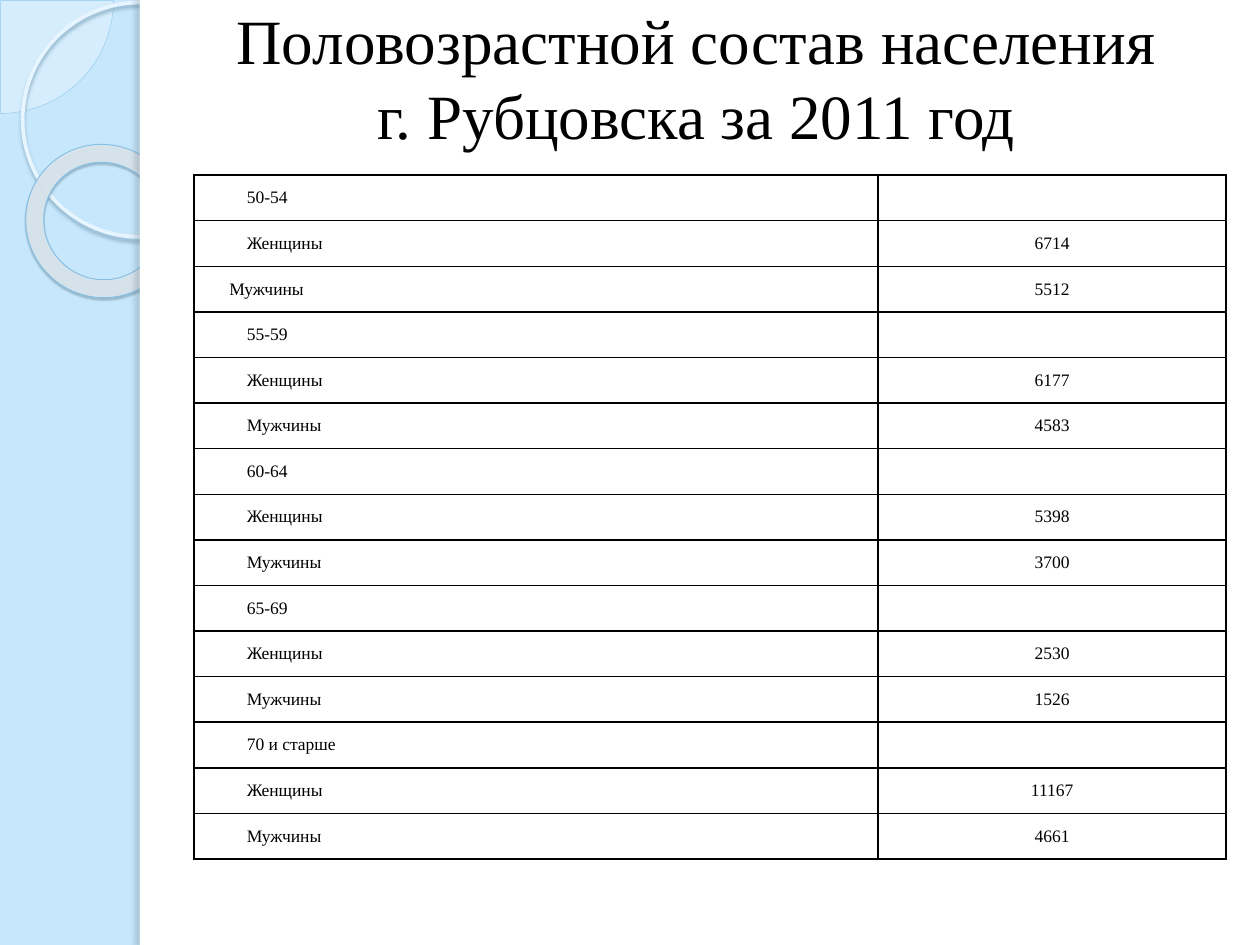
from lxml.etree import SubElement
from pptx import Presentation
from pptx.dml.color import RGBColor
from pptx.enum.shapes import MSO_SHAPE as SHAPE
from pptx.enum.text import MSO_ANCHOR as ANCHOR, PP_ALIGN as ALIGN
from pptx.oxml.ns import qn
from pptx.util import Inches, Pt

FONT = "Times New Roman"
COLORS = {
    "sky": "C6E7FC", "white": "FFFFFF", "black": "000000",
    "pie": "F5FBFF", "pie_line": "92CBEF", "ring": "E6F5FF",
    "donut": "DCE7EE", "donut_line": "85BFE4",
    "ring_shadow": "88ADC4", "donut_shadow": "3F5767", "edge_shadow": "61737F",
}
TITLE = "Половозрастной состав населения г. Рубцовска за 2011 год"
AGE_GROUPS = [
    ("50-54", 6714, 5512),
    ("55-59", 6177, 4583),
    ("60-64", 5398, 3700),
    ("65-69", 2530, 1526),
    ("70 и старше", 11167, 4661),
]
ROW_HEIGHT = 0.362
COLUMN_WIDTHS = (5.43, 2.76)


def rgb(name):
    return RGBColor.from_string(COLORS[name])


def set_alpha(color_element, percent):
    SubElement(color_element, qn("a:alpha"), val=str(percent * 1000))


def add_shadow(shape, color, alpha, blur, distance, angle):
    effects = shape.element.spPr.find(qn("a:effectLst"))
    shadow = SubElement(effects, qn("a:outerShdw"), blurRad=str(Pt(blur)),
                        dist=str(Pt(distance)), dir=str(angle * 60000),
                        algn="tl", rotWithShape="0")
    set_alpha(SubElement(shadow, qn("a:srgbClr"), val=COLORS[color]), alpha)


def add_decoration(page, kind, box, fill=None, alpha=None, line=None,
                   adjustments=(), rotation=0, shadow=None):
    shape = page.shapes.add_shape(kind, *map(Inches, box))
    shape.shadow.inherit = False
    shape.rotation = rotation
    for index, value in enumerate(adjustments):
        shape.adjustments[index] = value
    if fill:
        shape.fill.solid()
        shape.fill.fore_color.rgb = rgb(fill)
        if alpha:
            set_alpha(shape.element.spPr.find(".//" + qn("a:srgbClr")), alpha)
    else:
        shape.fill.background()
    if line:
        color, width = line
        shape.line.color.rgb = rgb(color)
        shape.line.width = Pt(width)
    else:
        shape.line.fill.background()
    if shadow:
        add_shadow(shape, *shadow)


def add_side_band(page):
    add_decoration(page, SHAPE.PIE, (-0.89, -0.89, 1.79, 1.79), "pie", 33,
                   line=("pie_line", 0.25), adjustments=(0, 54))
    add_decoration(page, SHAPE.OVAL, (0.18, 0.02, 1.86, 1.86),
                   line=("ring", 2.15), shadow=("ring_shadow", 85, 2, 2, 90))
    add_decoration(page, SHAPE.DONUT, (0.2, 1.15, 1.23, 1.21), "donut", 90,
                   line=("donut_line", 0.58), adjustments=(0.118,),
                   rotation=38.6, shadow=("donut_shadow", 35, 1, 1.2, 75))
    add_decoration(page, SHAPE.RECTANGLE, (1.11, 0, 8.89, 7.5), "white")
    add_decoration(page, SHAPE.RECTANGLE, (1.11, 0, 0.08, 7.5), "white",
                   shadow=("edge_shadow", 25, 3, 3, 180))


def write(frame, text, size, align):
    para = frame.paragraphs[0]
    para.alignment = align
    span = para.add_run()
    span.text = text
    for name, value in {"name": FONT, "size": Pt(size), "bold": False}.items():
        setattr(span.font, name, value)
    span.font.color.rgb = rgb("black")


def place_title(page):
    title = page.shapes.title
    title.left, title.top, title.width, title.height = map(
        Inches, (1.67, 0.28, 7.71, 0.94))
    frame = title.text_frame
    frame.word_wrap = True
    frame.vertical_anchor = ANCHOR.MIDDLE
    frame.margin_bottom = Inches(0.33)
    write(frame, TITLE, 36, ALIGN.CENTER)
    # Bring the title in front of the white panel
    title.element.getparent().append(title.element)


def add_borders(cell):
    properties = cell._tc.get_or_add_tcPr()
    for index, side in enumerate(("lnL", "lnR", "lnT", "lnB")):
        border = properties.makeelement(qn("a:" + side), {"w": str(Pt(1))})
        fill = SubElement(border, qn("a:solidFill"))
        SubElement(fill, qn("a:srgbClr"), val=COLORS["black"])
        properties.insert(index, border)


def format_cell(cell, text, indent, align):
    margins = {"margin_left": indent, "margin_right": 0.01,
               "margin_top": 0.01, "margin_bottom": 0.01}
    for name, value in margins.items():
        setattr(cell, name, Inches(value))
    cell.vertical_anchor = ANCHOR.MIDDLE
    cell.fill.background()
    add_borders(cell)
    if text:
        write(cell.text_frame, text, 10, align)


def add_population_table(page):
    rows = []
    for age, women, men in AGE_GROUPS:
        rows += [(age, ""), ("Женщины", str(women)), ("Мужчины", str(men))]
    table = page.shapes.add_table(
        len(rows), 2, Inches(1.54), Inches(1.39), Inches(sum(COLUMN_WIDTHS)),
        Inches(ROW_HEIGHT * len(rows))).table
    table.first_row = table.horz_banding = False
    for column, width in zip(table.columns, COLUMN_WIDTHS):
        column.width = Inches(width)
    for index, (label, value) in enumerate(rows):
        table.rows[index].height = Inches(ROW_HEIGHT)
        indent = 0.28 if index == 2 else 0.42
        format_cell(table.cell(index, 0), label, indent, ALIGN.JUSTIFY)
        format_cell(table.cell(index, 1), value, 0.01, ALIGN.CENTER)


def main():
    deck = Presentation()
    deck.slide_width, deck.slide_height = Inches(10), Inches(7.5)
    page = deck.slides.add_slide(deck.slide_layouts[5])
    page.background.fill.solid()
    page.background.fill.fore_color.rgb = rgb("sky")
    add_side_band(page)
    place_title(page)
    add_population_table(page)
    deck.save("out.pptx")


if __name__ == "__main__":
    main()
